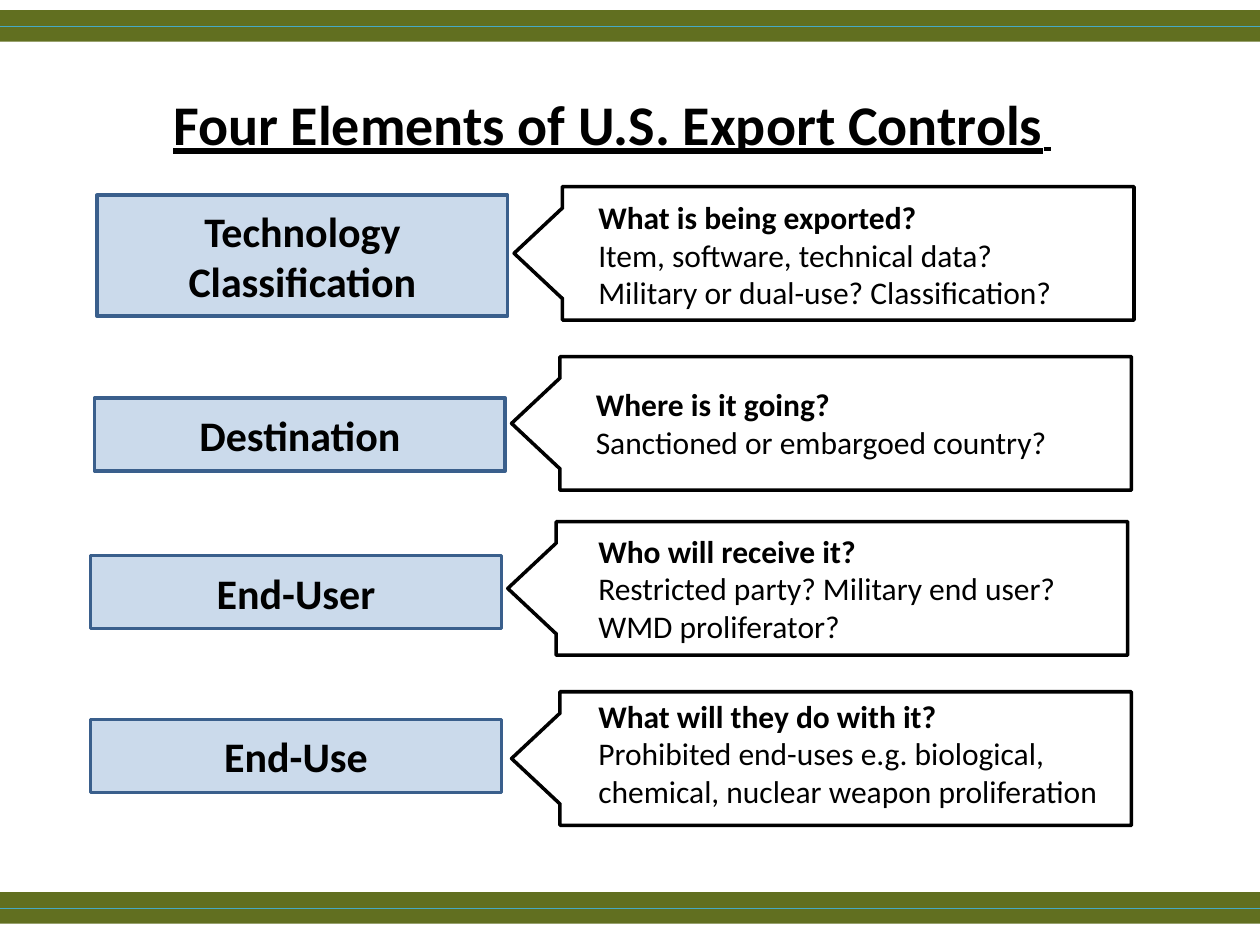
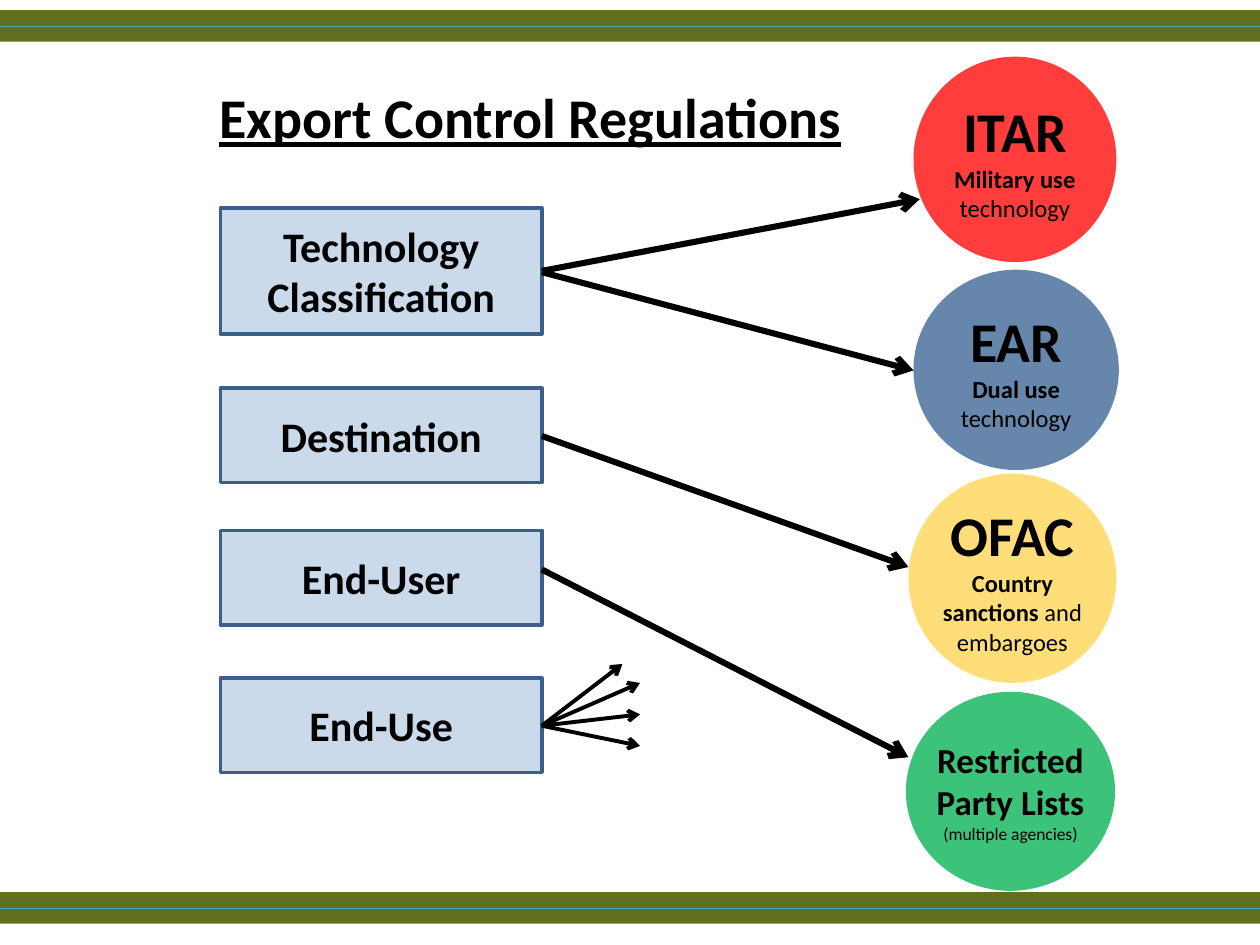
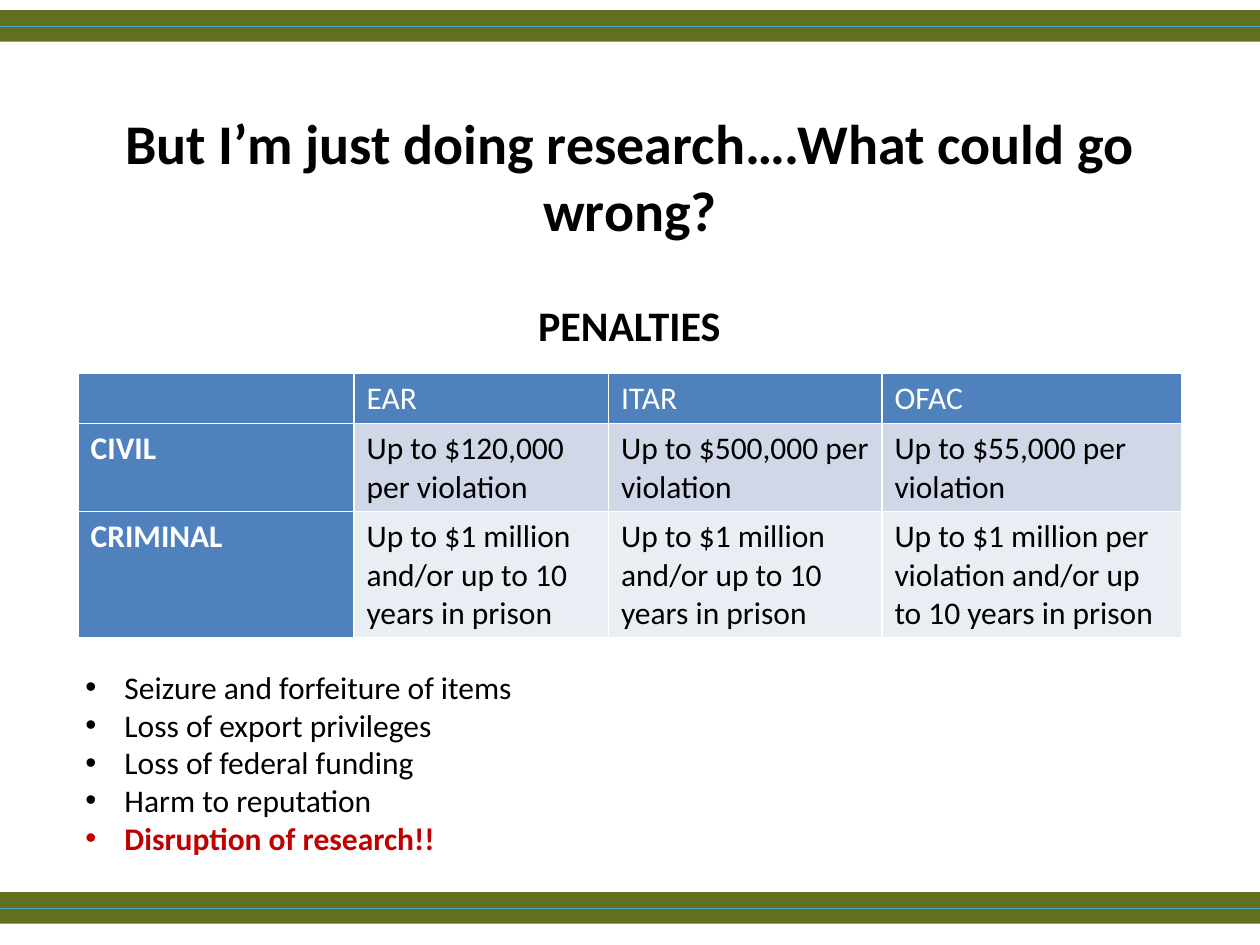
from pptx import Presentation
from pptx.dml.color import RGBColor
from pptx.enum.shapes import MSO_CONNECTOR, MSO_SHAPE
from pptx.enum.text import MSO_ANCHOR, MSO_AUTO_SIZE, PP_ALIGN
from pptx.oxml.ns import qn
from pptx.util import Inches, Pt
from lxml.etree import SubElement

FONT = "Calibri"
BLACK = RGBColor(0x00, 0x00, 0x00)
WHITE = RGBColor(0xFF, 0xFF, 0xFF)
OLIVE = RGBColor(0x61, 0x6F, 0x20)
TEAL = RGBColor(0x46, 0xAA, 0xC5)
BLUE = RGBColor(0x4F, 0x81, 0xBD)
EDGE = RGBColor(0x3A, 0x5F, 0x8C)
NAVY = RGBColor(0x37, 0x60, 0x92)
RED = RGBColor(0xFF, 0x00, 0x00)
GOLD = RGBColor(0xFF, 0xC0, 0x00)
GREEN = RGBColor(0x00, 0xB0, 0x50)
ALERT = RGBColor(0xC0, 0x00, 0x00)
ROWS = (RGBColor(0xD0, 0xD8, 0xE8), RGBColor(0xE9, 0xED, 0xF4))

LABELS = ("Technology Classification", "Destination", "End-User", "End-Use")


def style(run, size, bold=False, color=BLACK):
    font = run.font
    font.name, font.size, font.bold = FONT, Pt(size), bold
    font.color.rgb = color


class Deck:
    """Holds the shared style and draws on the current slide."""

    def __init__(self):
        self.prs = Presentation()
        self.prs.slide_width = Inches(10)
        self.prs.slide_height = Inches(7.5)
        self.slide = None

    def start(self, title, at, under=False, anchor=MSO_ANCHOR.MIDDLE):
        self.slide = self.prs.slides.add_slide(self.prs.slide_layouts[5])
        head = self.slide.shapes.title
        head.left, head.top, head.width, head.height = map(Inches, at)
        frame = head.text_frame
        frame.text = title
        frame.word_wrap = True
        frame.auto_size = MSO_AUTO_SIZE.NONE
        frame.vertical_anchor = anchor
        para = frame.paragraphs[0]
        para.alignment = PP_ALIGN.CENTER
        style(para.runs[0], 32, True)
        para.runs[0].font.underline = under
        for top in (0.08, 7.08):
            self.shape(MSO_SHAPE.RECTANGLE, (0, top, 10, 0.25), OLIVE)
            self.line((0, top + 0.13), (10, top + 0.13), TEAL, 0.75)

    def shape(self, kind, at, fill=None, alpha=100, edge=None):
        """Add a preset shape; alpha is the fill's opacity in percent."""
        item = self.slide.shapes.add_shape(kind, *map(Inches, at))
        item.shadow.inherit = False
        if fill is None:
            item.fill.background()
        else:
            item.fill.solid()
            item.fill.fore_color.rgb = fill
            if alpha < 100:
                color = item.element.spPr.find(".//" + qn("a:srgbClr"))
                SubElement(color, qn("a:alpha")).set("val", str(alpha * 1000))
        if edge is None:
            item.line.fill.background()
        else:
            item.line.color.rgb = edge
            item.line.width = Pt(2)
        return item

    def line(self, start, end, color=BLACK, width=3.5, arrow=False):
        item = self.slide.shapes.add_connector(
            MSO_CONNECTOR.STRAIGHT, *map(Inches, (*start, *end)))
        item.line.color.rgb = color
        item.line.width = Pt(width)
        props = item.element.spPr
        if arrow:
            tip = SubElement(props.find(qn("a:ln")), qn("a:tailEnd"))
            tip.set("type", "arrow")
        SubElement(props, qn("a:effectLst"))

    def put(self, frame, lines, align=PP_ALIGN.LEFT, anchor=MSO_ANCHOR.TOP):
        """Fill a frame; each line is a list of (text, size, bold) runs."""
        frame.word_wrap = True
        frame.vertical_anchor = anchor
        for i, runs in enumerate(lines):
            para = frame.add_paragraph() if i else frame.paragraphs[0]
            para.alignment = align
            for text, size, bold in runs:
                run = para.add_run()
                run.text = text
                style(run, size, bold)

    def text(self, at, lines, **place):
        box = self.slide.shapes.add_textbox(*map(Inches, at))
        self.put(box.text_frame, lines, **place)
        return box.text_frame

    def label(self, at, text):
        box = self.shape(MSO_SHAPE.RECTANGLE, at, BLUE, 29, EDGE)
        self.put(box.text_frame, [[(text, 24, True)]],
                 PP_ALIGN.CENTER, MSO_ANCHOR.MIDDLE)

    def callout(self, left, top, spot, ask, notes):
        """Draw a left-pointing callout with its text box at spot."""
        box = self.shape(MSO_SHAPE.RIGHT_ARROW_CALLOUT,
                         (left, top, 4.92, 1.06), edge=BLACK)
        box.rotation = 180
        for i, value in enumerate((0.668, 0.334, 0.356, 0.922)):
            box.adjustments[i] = value
        lines = [[(ask, 18, True)]] + [[(note, 18, False)] for note in notes]
        self.text(spot, lines)

    def circle(self, at, fill, alpha, width, lines):
        self.shape(MSO_SHAPE.OVAL, at, fill, alpha)
        left, top, span, height = at
        self.text((left + (span - width) / 2, top, width, height), lines,
                  align=PP_ALIGN.CENTER, anchor=MSO_ANCHOR.MIDDLE)

    def table(self, at, rows, widths, heights):
        grid = self.slide.shapes.add_table(
            len(rows), len(widths), *map(Inches, at)).table
        grid.first_col = True
        for col, width in zip(grid.columns, widths):
            col.width = Inches(width)
        for r, (row, height) in enumerate(zip(rows, heights)):
            grid.rows[r].height = Inches(height)
            for c, text in enumerate(row):
                cell = grid.cell(r, c)
                head = r == 0 or c == 0
                cell.fill.solid()
                cell.fill.fore_color.rgb = BLUE if head else ROWS[r - 1]
                cell.text_frame.text = text
                for para in cell.text_frame.paragraphs:
                    for run in para.runs:
                        style(run, 18, c == 0, WHITE if head else BLACK)

    def bullets(self, at, items):
        """List the items, the last one as an alert."""
        frame = self.text(at, [[(item, 18, False)] for item in items])
        for para in frame.paragraphs:
            props = para._p.get_or_add_pPr()
            props.set("marL", str(Inches(0.31)))
            props.set("indent", str(-Inches(0.31)))
            SubElement(props, qn("a:buFont")).set("typeface", "Arial")
            SubElement(props, qn("a:buChar")).set("char", "•")
        style(frame.paragraphs[-1].runs[0], 18, True, ALERT)


def elements(deck):
    deck.start("Four Elements of U.S. Export Controls",
               (0.33, 0.66, 9.06, 0.94), True, MSO_ANCHOR.TOP)
    space = deck.slide.shapes.title.text_frame.paragraphs[0].add_run()
    space.text = " "
    style(space, 20)
    space.font.underline = True
    callouts = (
        (4.08, 1.48, (4.65, 1.52, 4.75, 1.01), "What is being exported?",
         ["Item, software, technical data?",
          "Military or dual-use? Classification?"]),
        (4.06, 2.83, (4.63, 3.01, 4.35, 0.71), "Where is it going?",
         ["Sanctioned or embargoed country?"]),
        (4.03, 4.14, (4.65, 4.17, 4.19, 1.01), "Who will receive it?",
         ["Restricted party? Military end user? WMD proliferator?"]),
        (4.06, 5.49, (4.65, 5.48, 4.75, 1.01), "What will they do with it?",
         ["Prohibited end-uses e.g. biological, "
          "chemical, nuclear weapon proliferation"]),
    )
    for callout in callouts:
        deck.callout(*callout)
    spots = ((0.77, 1.55, 0.96), (0.75, 3.16, 0.58),
             (0.72, 4.41, 0.58), (0.72, 5.71, 0.58))
    for (left, top, height), text in zip(spots, LABELS):
        deck.label((left, top, 3.26, height), text)


def rules(deck):
    deck.start("Export Control Regulations", (0.33, 0.58, 7.76, 0.69), True)
    spots = ((1.65, 1), (3.08, 0.75), (4.21, 0.75), (5.38, 0.75))
    for (top, height), text in zip(spots, LABELS):
        deck.label((1.75, top, 2.55, height), text)
    circles = (
        ((7.25, 0.45, 1.61, 1.63), RED, 76, 1.24,
         [[("ITAR", 32, True)],
          [("Military use", 14, True), (" technology", 14, False)]]),
        ((7.25, 2.14, 1.63, 1.59), NAVY, 76, 1.24,
         [[("EAR", 32, True)],
          [("Dual use ", 14, True), ("technology", 14, False)]]),
        ((7.21, 3.76, 1.65, 1.66), GOLD, 52, 1.42,
         [[("OFAC", 32, True)],
          [("Country sanctions ", 14, True), ("and embargoes", 14, False)]]),
        ((7.19, 5.49, 1.66, 1.58), GREEN, 76, 1.77,
         [[("Restricted Party Lists", 20, True)],
          [("(multiple agencies)", 10, False)]]),
    )
    for circle in circles:
        deck.circle(*circle)
    links = ((2.15, 7.3, 1.58), (2.16, 7.25, 2.94),
             (3.46, 7.21, 4.5), (4.52, 7.21, 6.01))
    for y, *end in links:
        deck.line((4.3, y), end, arrow=True)
    for end in ((5.08, 5.42), (4.94, 5.27), (5.08, 5.67), (5.08, 5.92)):
        deck.line((4.3, 5.76), end, width=2.25, arrow=True)


def risks(deck):
    deck.start("But I’m just doing research….What could go wrong?",
               (0.5, 0.77, 9, 1.25))
    deck.text((0.62, 2.33, 8.75, 0.5), [[("PENALTIES", 24, True)]],
              align=PP_ALIGN.CENTER)
    prison = "Up to $1 million\nand/or up to 10 years in prison"
    rows = (
        ("", "EAR", "ITAR", "OFAC"),
        ("CIVIL", "Up to $120,000 per violation",
         "Up to $500,000 per violation", "Up to $55,000 per violation"),
        ("CRIMINAL", prison, prison,
         "Up to $1 million per violation and/or up to 10 years in prison"),
    )
    deck.table((0.62, 2.96, 8.75, 2.1), rows,
               (2.19, 2.02, 2.17, 2.38), (0.4, 0.7, 1))
    deck.bullets((0.58, 5.25, 9, 1.62), (
        "Seizure and forfeiture of items", "Loss of export privileges",
        "Loss of federal funding", "Harm to reputation",
        "Disruption of research!!"))


def main():
    deck = Deck()
    for build in (elements, rules, risks):
        build(deck)
    deck.prs.save("out.pptx")


if __name__ == "__main__":
    main()
